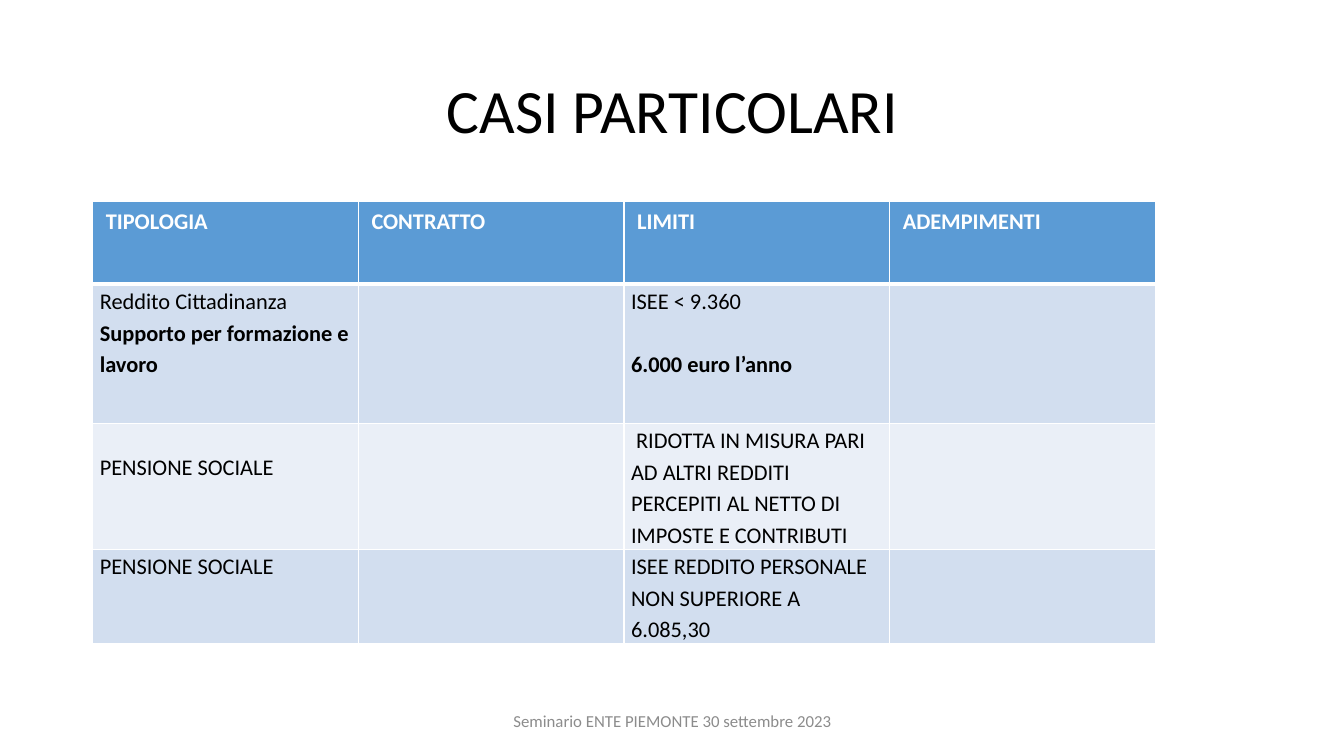
from dataclasses import dataclass

from lxml.etree import SubElement
from pptx import Presentation
from pptx.dml.color import RGBColor
from pptx.enum.text import MSO_ANCHOR, PP_ALIGN
from pptx.oxml.ns import qn
from pptx.util import Inches, Pt


@dataclass(frozen=True)
class Theme:
    font: str = "Calibri"
    ink: str = "000000"
    paper: str = "FFFFFF"
    head: str = "5B9BD5"
    bands: tuple = ("D2DEEF", "EAEFF7")
    muted: str = "8C8C8C"
    title: int = 44
    body: int = 16
    small: int = 12


@dataclass(frozen=True)
class Line:
    text: str
    bold: bool = False
    before: float = 0
    indent: float = 0


THEME = Theme()
HEADS = ("TIPOLOGIA", "CONTRATTO", "LIMITI", "ADEMPIMENTI")
HEIGHTS = (0.82, 1.38, 1.25, 0.94)
PAD = 0.07
# Each case: first column, third column, top inset of the first column
CASES = (
    ((Line("Reddito Cittadinanza"),
      Line("Supporto per formazione e lavoro", bold=True)),
     (Line("ISEE < 9.360"),
      Line("6.000 euro l’anno", bold=True, before=22.5)), 0),
    ((Line("PENSIONE SOCIALE"),),
     (Line("RIDOTTA IN MISURA PARI AD ALTRI REDDITI PERCEPITI "
           "AL NETTO DI IMPOSTE E CONTRIBUTI", indent=0.05),), 0.27),
    ((Line("PENSIONE SOCIALE"),),
     (Line("ISEE REDDITO PERSONALE NON SUPERIORE A 6.085,30"),), 0),
)


def add_run(para, text, size, color, bold=False):
    run = para.add_run()
    run.text = text
    font = run.font
    font.name, font.size, font.bold = THEME.font, Pt(size), bold
    font.color.rgb = RGBColor.from_string(color)


def place(shape, box):
    shape.left, shape.top, shape.width, shape.height = map(Inches, box)


def fill_frame(shape, text, size, color):
    """Center one line of text in a shape."""
    frame = shape.text_frame
    frame.word_wrap = True
    frame.vertical_anchor = MSO_ANCHOR.MIDDLE
    para = frame.paragraphs[0]
    para.alignment = PP_ALIGN.CENTER
    add_run(para, text, size, color)
    return para


def add_title(slide, box):
    title = slide.shapes.title
    place(title, box)
    para = fill_frame(title, "CASI PARTICOLARI", THEME.title, THEME.ink)
    para.line_spacing = 0.9


def add_footer(slide, box):
    note = slide.shapes.add_textbox(*map(Inches, box))
    fill_frame(note, "Seminario ENTE PIEMONTE 30 settembre 2023",
               THEME.small, THEME.muted)


def style_cell(cell, color, top=1, bottom=1):
    """Draw the cell's borders, in points, and then its fill."""
    props = cell._tc.get_or_add_tcPr()
    for side, width in zip("LRTB", (1, 1, top, bottom)):
        edge = SubElement(props, qn(f"a:ln{side}"), w=str(Pt(width)))
        paint = SubElement(edge, qn("a:solidFill"))
        SubElement(paint, qn("a:srgbClr"), val=THEME.paper)
    cell.fill.solid()
    cell.fill.fore_color.rgb = RGBColor.from_string(color)


def set_inset(cell, side, top, bottom):
    cell.margin_left = cell.margin_right = Inches(side)
    cell.margin_top, cell.margin_bottom = Inches(top), Inches(bottom)


def write_cell(cell, lines, top):
    set_inset(cell, PAD, top, 0)
    frame = cell.text_frame
    for i, line in enumerate(lines):
        para = frame.add_paragraph() if i else frame.paragraphs[0]
        para.line_spacing = 1.15
        if line.before:
            para.space_before = Pt(line.before)
        if line.indent:
            para._p.get_or_add_pPr().set("indent", str(Inches(line.indent)))
        add_run(para, line.text, THEME.body, THEME.ink, line.bold)


def add_cases(slide, box):
    shape = slide.shapes.add_table(len(HEIGHTS), len(HEADS), *map(Inches, box))
    table = shape.table
    table.horz_banding = False
    for col in table.columns:
        col.width = Inches(box[2] / len(HEADS))
    for row, height in zip(table.rows, HEIGHTS):
        row.height = Inches(height)
    for cell, head in zip(table.rows[0].cells, HEADS):
        style_cell(cell, THEME.head, bottom=3)
        set_inset(cell, 0.13, PAD, PAD)
        add_run(cell.text_frame.paragraphs[0], head,
                THEME.body, THEME.paper, True)
    for r, (kind, limit, top) in enumerate(CASES, 1):
        for cell in table.rows[r].cells:
            style_cell(cell, THEME.bands[(r - 1) % 2], top=3 if r == 1 else 1)
        write_cell(table.cell(r, 0), kind, top)
        write_cell(table.cell(r, 2), limit, 0)


def main():
    deck = Presentation()
    deck.slide_width, deck.slide_height = Inches(13.33), Inches(7.5)
    slide = deck.slides.add_slide(deck.slide_layouts[5])
    add_title(slide, (0.92, 0.4, 11.5, 1.45))
    add_cases(slide, (0.92, 2, 10.54, sum(HEIGHTS)))
    add_footer(slide, (4.42, 6.95, 4.5, 0.4))
    deck.save("out.pptx")


if __name__ == "__main__":
    main()
